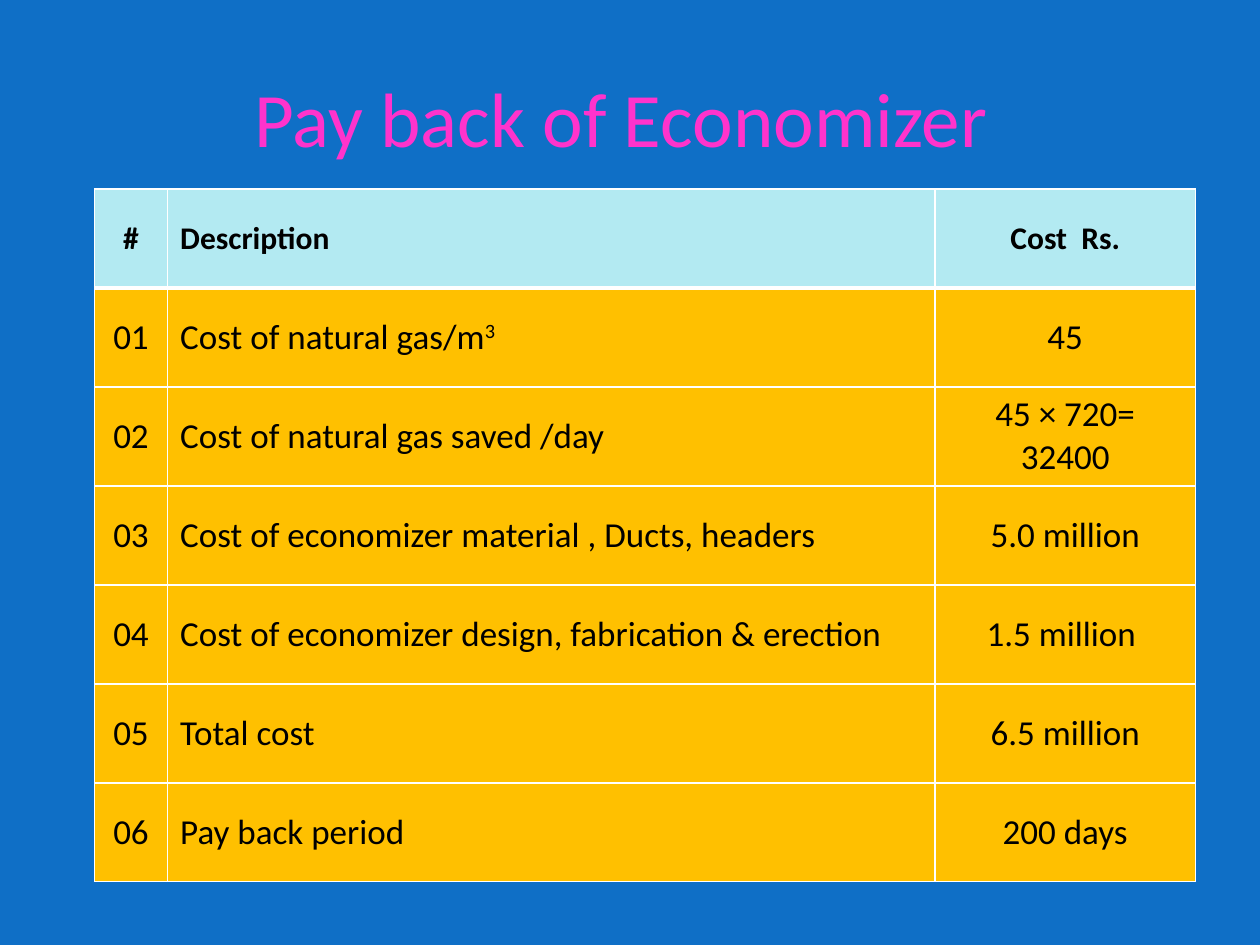
from dataclasses import dataclass

from lxml.etree import SubElement
from pptx import Presentation
from pptx.dml.color import RGBColor
from pptx.enum.text import MSO_ANCHOR as Anchor, PP_ALIGN as Align
from pptx.oxml.ns import qn
from pptx.util import Inches, Pt


@dataclass(frozen=True)
class Theme:
    font: str = "Calibri"
    background: str = "0F6FC6"
    title: str = "FF33CC"
    text: str = "000000"
    header_fill: str = "B3EAF2"
    body_fill: str = "FFC000"
    border: str = "FFFFFF"
    title_size: int = 44
    header_size: int = 18
    body_size: int = 20
    thin: int = 1
    thick: int = 3


THEME = Theme()

COLUMN_WIDTHS = (0.58, 6.09, 2.07)
COLUMN_ALIGNS = (Align.CENTER, Align.LEFT, Align.CENTER)
TABLE_HEIGHT = 5.5
HEADER = ("#", "Description", "Cost  Rs.")
# A caret starts a superscript
COSTS = (
    ("Cost of natural gas/m^3", "45"),
    ("Cost of natural gas saved /day", "45 × 720= 32400"),
    ("Cost of economizer material , Ducts, headers", "5.0 million"),
    ("Cost of economizer design, fabrication & erection", "1.5 million "),
    ("Total cost", "6.5 million"),
    ("Pay back period", "200 days"),
)


def write_text(frame, text, *, size, color, bold=False, align=Align.LEFT):
    para = frame.paragraphs[0]
    para.alignment = align
    base, _, superscript = text.partition("^")
    for part in filter(None, (base, superscript)):
        span = para.add_run()
        span.text = part
        span.font.name = THEME.font
        span.font.size = Pt(size)
        span.font.bold = bold
        span.font.color.rgb = RGBColor.from_string(color)
    if superscript:
        span._r.get_or_add_rPr().set("baseline", "30000")


def set_borders(cell, **widths):
    properties = cell._tc.get_or_add_tcPr()
    for side in ("L", "R", "T", "B"):
        width = widths.get(side, THEME.thin)
        line = SubElement(properties, qn(f"a:ln{side}"), w=str(Pt(width)))
        fill = SubElement(line, qn("a:solidFill"))
        SubElement(fill, qn("a:srgbClr"), val=THEME.border)


def add_title(page, text):
    box = page.shapes.title
    box.left, box.top = Inches(0.5), Inches(0.3)
    box.width, box.height = Inches(9), Inches(1.25)
    box.text_frame.vertical_anchor = Anchor.MIDDLE
    write_text(box.text_frame, text, size=THEME.title_size,
               color=THEME.title, align=Align.CENTER)


def fill_cell(cell, text, align, is_header, borders):
    set_borders(cell, **borders)
    cell.fill.solid()
    color = THEME.header_fill if is_header else THEME.body_fill
    cell.fill.fore_color.rgb = RGBColor.from_string(color)
    cell.vertical_anchor = Anchor.MIDDLE
    size = THEME.header_size if is_header else THEME.body_size
    write_text(cell.text_frame, text, size=size, color=THEME.text,
               bold=is_header, align=align)


def add_cost_table(page):
    numbered = [(f"{number:02}", *cost) for number, cost in enumerate(COSTS, 1)]
    rows = [HEADER, *numbered]
    table = page.shapes.add_table(
        len(rows), len(HEADER), Inches(0.75), Inches(1.5),
        Inches(sum(COLUMN_WIDTHS)), Inches(TABLE_HEIGHT)).table
    for column, width in zip(table.columns, COLUMN_WIDTHS):
        column.width = Inches(width)
    for index, values in enumerate(rows):
        table.rows[index].height = Inches(TABLE_HEIGHT / len(rows))
        # The rule below the header is shared by the first two rows
        borders = {0: {"B": THEME.thick}, 1: {"T": THEME.thick}}.get(index, {})
        for cell, text, align in zip(table.rows[index].cells, values, COLUMN_ALIGNS):
            fill_cell(cell, text, align, index == 0, borders)


def main():
    deck = Presentation()
    deck.slide_width, deck.slide_height = Inches(10), Inches(7.5)
    page = deck.slides.add_slide(deck.slide_layouts.get_by_name("Title Only"))

    # Background
    page.background.fill.solid()
    page.background.fill.fore_color.rgb = RGBColor.from_string(THEME.background)

    # Content
    add_title(page, "Pay back of Economizer ")
    add_cost_table(page)
    deck.save("out.pptx")


if __name__ == "__main__":
    main()
